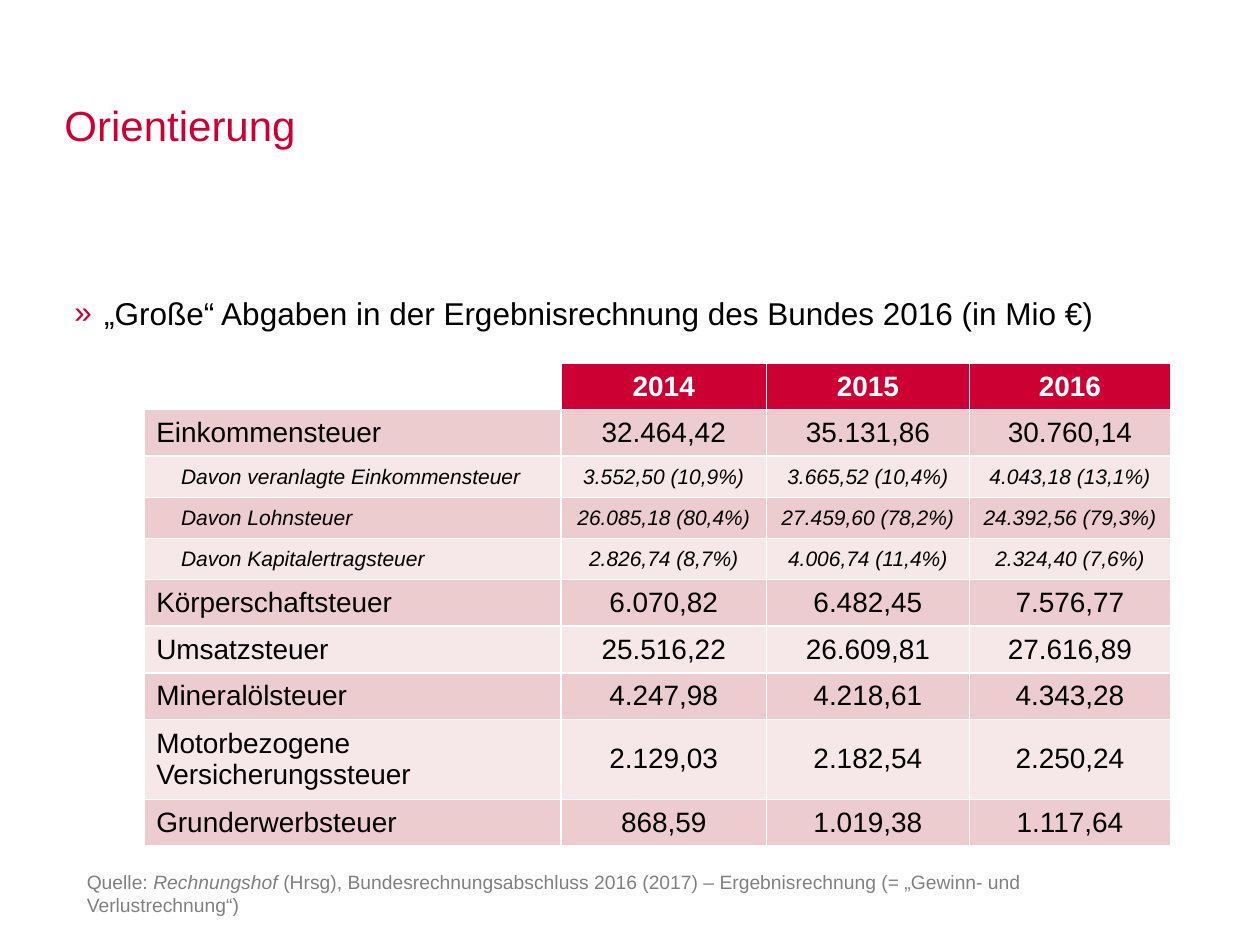
from dataclasses import dataclass

from lxml import etree
from pptx import Presentation
from pptx import util as u
from pptx.dml import color
from pptx.enum import text as t
from pptx.oxml import ns


@dataclass(frozen=True)
class Theme:
    font: str = "Arial"
    accent: str = "CC0033"
    ink: str = "000000"
    paper: str = "FFFFFF"
    muted: str = "808080"
    bands: tuple = ("ECCCCE", "F6E7E8")
    title: int = 24
    body: int = 18
    cell: int = 16
    detail: int = 12
    source: int = 11


THEME = Theme()
YEARS = ("", "2014", "2015", "2016")
DETAIL = "Davon "
TAXES = (
    ("Einkommensteuer", "32.464,42", "35.131,86", "30.760,14"),
    ("Davon veranlagte Einkommensteuer", "3.552,50 (10,9%)", "3.665,52 (10,4%)", "4.043,18 (13,1%)"),
    ("Davon Lohnsteuer", "26.085,18 (80,4%)", "27.459,60 (78,2%)", "24.392,56 (79,3%)"),
    ("Davon Kapitalertragsteuer", "2.826,74 (8,7%)", "4.006,74 (11,4%)", "2.324,40 (7,6%)"),
    ("Körperschaftsteuer", "6.070,82", "6.482,45", "7.576,77"),
    ("Umsatzsteuer", "25.516,22", "26.609,81", "27.616,89"),
    ("Mineralölsteuer", "4.247,98", "4.218,61", "4.343,28"),
    ("Motorbezogene Versicherungssteuer", "2.129,03", "2.182,54", "2.250,24"),
    ("Grunderwerbsteuer", "868,59", "1.019,38", "1.117,64"),
)
COLUMN_WIDTHS = (8.41, 4.14, 4.09, 4.06)
ROW_HEIGHT, DETAIL_HEIGHT, TWO_LINE_HEIGHT = 0.93, 0.83, 1.61


def rgb(value):
    return color.RGBColor.from_string(value)


def add_element(parent, tag, **attributes):
    return etree.SubElement(parent, ns.qn(tag), attributes)


def write(para, spans, size, ink=THEME.ink, bold=False, italic=False,
          align=t.PP_ALIGN.LEFT):
    """Write a string, or (string, italic) pairs, into a paragraph."""
    para.alignment = align
    for words, slanted in [(spans, italic)] if isinstance(spans, str) else spans:
        if not words:
            # An empty cell still needs a type size to keep its row low
            add_element(para._p, "a:endParaRPr", sz=str(size * 100))
            continue
        span = para.add_run()
        span.text = words
        span.font.name, span.font.size = THEME.font, u.Pt(size)
        span.font.bold, span.font.italic = bold, slanted
        span.font.color.rgb = rgb(ink)


def place(holder, left, top, width, height):
    """Move a placeholder and let its text start at the box's top left."""
    holder.left, holder.top = u.Cm(left), u.Cm(top)
    holder.width, holder.height = u.Cm(width), u.Cm(height)
    frame = holder.text_frame
    frame.margin_left = frame.margin_right = frame.margin_top = frame.margin_bottom = 0
    frame.vertical_anchor = t.MSO_ANCHOR.TOP
    frame.auto_size = t.MSO_AUTO_SIZE.NONE
    frame.word_wrap = True
    return frame.paragraphs[0]


def fill_title(page, *box):
    para = place(page.shapes.title, *box)
    para.line_spacing = 0.9
    write(para, "Orientierung", THEME.title, THEME.accent)


def fill_body(page, *box):
    para = place(page.placeholders[1], *box)
    para.space_before = u.Pt(0)
    indent = u.Cm(0.6)
    props = para._p.get_or_add_pPr()
    props.set("marL", str(indent))
    props.set("indent", str(-indent))
    add_element(add_element(props, "a:buClr"), "a:srgbClr", val=THEME.accent)
    add_element(props, "a:buChar", char="»")
    write(para, "„Große“ Abgaben in der Ergebnisrechnung des Bundes 2016 (in Mio €)",
          THEME.body)


def outline_cell(cell):
    props = cell._tc.get_or_add_tcPr()
    for index, side in enumerate(("a:lnL", "a:lnR", "a:lnT", "a:lnB")):
        line = etree.Element(ns.qn(side), w=str(u.Pt(1)))
        add_element(add_element(line, "a:solidFill"), "a:srgbClr", val=THEME.paper)
        props.insert(index, line)


def format_cell(cell, fill):
    cell.vertical_anchor = t.MSO_ANCHOR.MIDDLE
    cell.margin_left = cell.margin_right = u.Cm(0.25)
    cell.margin_top = cell.margin_bottom = u.Cm(0.13)
    if fill:
        cell.fill.solid()
        cell.fill.fore_color.rgb = rgb(fill)
    else:
        cell.fill.background()
    outline_cell(cell)


def add_tax_table(page, left, top):
    heights = [ROW_HEIGHT]
    for label, *_ in TAXES:
        heights.append(DETAIL_HEIGHT if label.startswith(DETAIL)
                       else TWO_LINE_HEIGHT if label.startswith("Motor")
                       else ROW_HEIGHT)
    grid = page.shapes.add_table(len(heights), len(COLUMN_WIDTHS), u.Cm(left), u.Cm(top),
                                 u.Cm(sum(COLUMN_WIDTHS)), u.Cm(sum(heights))).table
    grid.horz_banding = False
    for column, width in zip(grid.columns, COLUMN_WIDTHS):
        column.width = u.Cm(width)
    for row, height in zip(grid.rows, heights):
        row.height = u.Cm(height)

    # Year header; the corner stays empty
    for index, year in enumerate(YEARS):
        cell = grid.cell(0, index)
        format_cell(cell, THEME.accent if year else None)
        write(cell.text_frame.paragraphs[0], year, THEME.cell, THEME.paper,
              bold=True, align=t.PP_ALIGN.CENTER)

    # Taxes, with their components smaller, slanted and indented
    for row, values in enumerate(TAXES, start=1):
        detail = values[0].startswith(DETAIL)
        for index, value in enumerate(values):
            cell = grid.cell(row, index)
            format_cell(cell, THEME.bands[(row - 1) % 2])
            para = cell.text_frame.paragraphs[0]
            if detail and index == 0:
                para._p.get_or_add_pPr().set("marL", str(u.Cm(0.5)))
            write(para, value, THEME.detail if detail else THEME.cell, italic=detail,
                  align=t.PP_ALIGN.CENTER if index else t.PP_ALIGN.LEFT)


def add_source(page, left, top, width, height):
    box = page.shapes.add_textbox(u.Cm(left), u.Cm(top), u.Cm(width), u.Cm(height))
    frame = box.text_frame
    frame.word_wrap = True
    frame.auto_size = t.MSO_AUTO_SIZE.SHAPE_TO_FIT_TEXT
    write(frame.paragraphs[0],
          [("Quelle: ", False), ("Rechnungshof ", True),
           ("(Hrsg), Bundesrechnungsabschluss 2016 (2017) – Ergebnisrechnung "
            "(= „Gewinn- und Verlustrechnung“)", False)],
          THEME.source, THEME.muted)


def main():
    deck = Presentation()
    deck.slide_width, deck.slide_height = u.Cm(25.4), u.Cm(19.05)
    page = deck.slides.add_slide(deck.slide_layouts[1])
    fill_title(page, 1.3, 2.13, 20.83, 1.68)
    fill_body(page, 1.5, 5.92, 22.68, 11.3)
    add_source(page, 1.5, 17.42, 21.34, 1.19)
    add_tax_table(page, 2.9, 7.32)
    deck.save("out.pptx")


if __name__ == "__main__":
    main()
